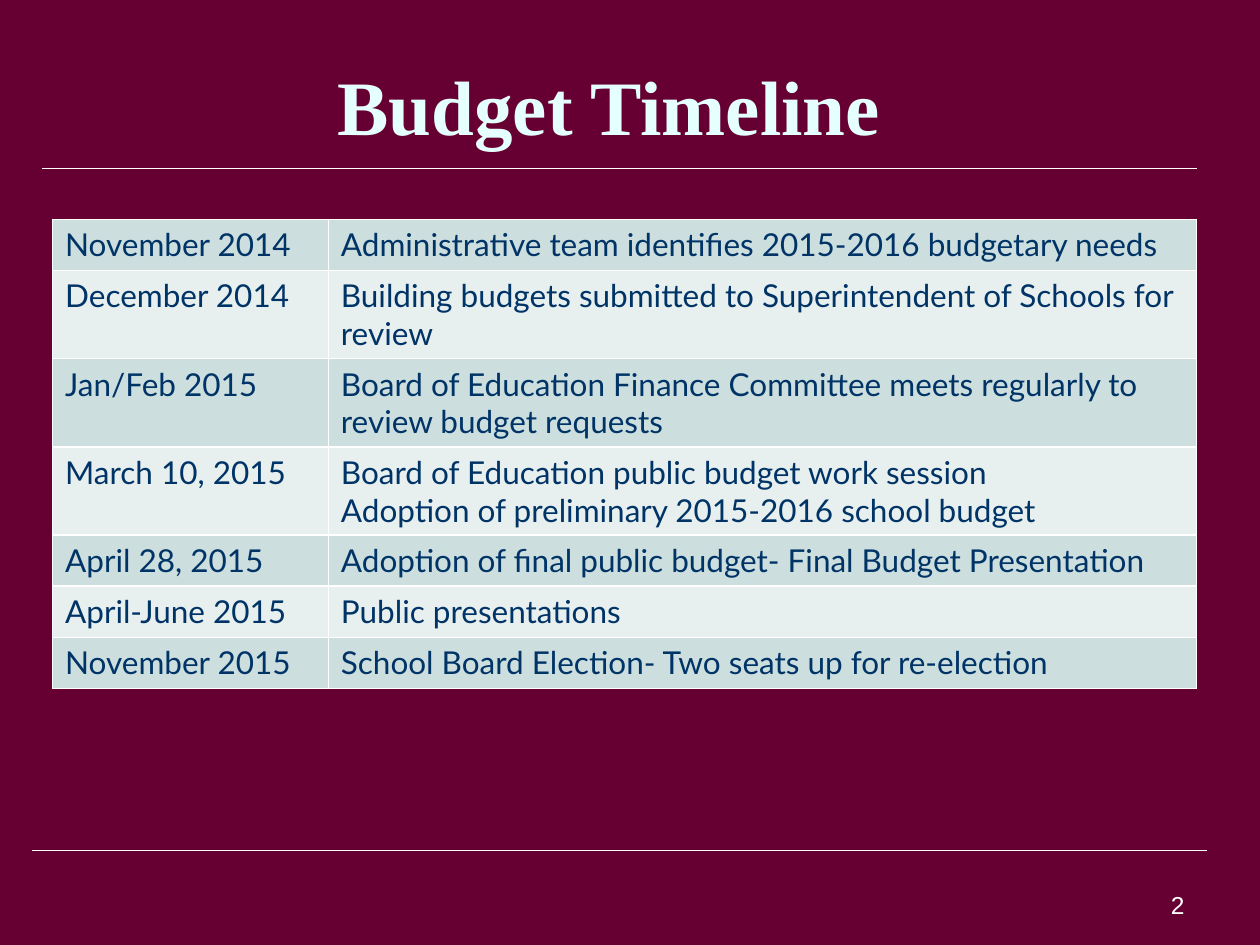
from lxml.etree import SubElement
from pptx import Presentation
from pptx.dml.color import RGBColor
from pptx.enum.shapes import MSO_CONNECTOR as Connector
from pptx.enum.text import MSO_ANCHOR as Anchor, PP_ALIGN as Align
from pptx.oxml.ns import qn
from pptx.util import Cm, Pt

TIMELINE = [
    ("November 2014", "Administrative team identifies 2015-2016 budgetary needs"),
    ("December 2014", "Building budgets submitted to Superintendent of Schools for review"),
    ("Jan/Feb 2015", "Board of Education Finance Committee meets regularly to review budget requests"),
    ("March 10, 2015", "Board of Education public budget work session\n"
                       "Adoption of preliminary 2015-2016 school budget"),
    ("April 28, 2015", "Adoption of final public budget- Final Budget Presentation"),
    ("April-June 2015", "Public presentations"),
    ("November 2015", "School Board Election- Two seats up for re-election"),
]


def paint(color_format, hex_color):
    color_format.rgb = RGBColor.from_string(hex_color)


class TimelinePage:
    background = "660033"
    white = "FFFFFF"
    title_color = "E5FFFF"
    table_text = "003366"
    bands = ("CCDEDE", "E7EFEF")

    def __init__(self, deck):
        self.page = deck.slides.add_slide(deck.slide_layouts[6])
        fill = self.page.background.fill
        fill.solid()
        paint(fill.fore_color, self.background)

    def style(self, frame, font, size, color, align=Align.LEFT, bold=False):
        for para in frame.paragraphs:
            para.alignment = align
            for span in para.runs:
                span.font.name = font
                span.font.size = Pt(size)
                span.font.bold = bold
                paint(span.font.color, color)

    def rule(self, left, right, top):
        line = self.page.shapes.add_connector(
            Connector.STRAIGHT, Cm(left), Cm(top), Cm(right), Cm(top))
        line.line.width = Pt(0.75)
        paint(line.line.color, self.white)
        SubElement(line._element.spPr, qn("a:effectLst"))

    def text(self, text, left, top, width, height, anchor, **style):
        box = self.page.shapes.add_textbox(Cm(left), Cm(top), Cm(width), Cm(height))
        frame = box.text_frame
        frame.word_wrap = True
        frame.vertical_anchor = anchor
        frame.text = text
        self.style(frame, **style)

    def border(self, cell):
        properties = cell._tc.get_or_add_tcPr()
        for side in ("lnL", "lnR", "lnT", "lnB"):
            edge = SubElement(properties, qn(f"a:{side}"), w=str(Pt(1)))
            fill = SubElement(edge, qn("a:solidFill"))
            SubElement(fill, qn("a:srgbClr"), val=self.white)

    def table(self, rows, left, top, widths, row_height):
        table = self.page.shapes.add_table(
            len(rows), len(widths), Cm(left), Cm(top),
            Cm(sum(widths)), Cm(row_height * len(rows))).table
        for column, width in zip(table.columns, widths):
            column.width = Cm(width)
        for index, row in enumerate(rows):
            for position, text in enumerate(row):
                cell = table.cell(index, position)
                cell.text_frame.text = text
                self.style(cell.text_frame, "Lato", 18, self.table_text)
                self.border(cell)
                cell.fill.solid()
                paint(cell.fill.fore_color, self.bands[index % 2])


def main():
    deck = Presentation()
    deck.slide_width, deck.slide_height = Cm(25.4), Cm(19.05)
    page = TimelinePage(deck)
    page.rule(0.85, 24.13, 3.39)
    page.rule(0.64, 24.34, 17.15)
    page.text("2", 18.2, 17.36, 5.93, 1.31, Anchor.BOTTOM,
              font="Arial", size=14, color=page.white, align=Align.RIGHT)
    page.text("Budget Timeline", 0.64, 0.85, 23.28, 2.54, Anchor.MIDDLE,
              font="Times New Roman", size=44, color=page.title_color,
              align=Align.CENTER, bold=True)
    page.table(TIMELINE, 1.06, 4.42, (5.56, 17.5), 1.03)
    deck.save("out.pptx")


if __name__ == "__main__":
    main()
